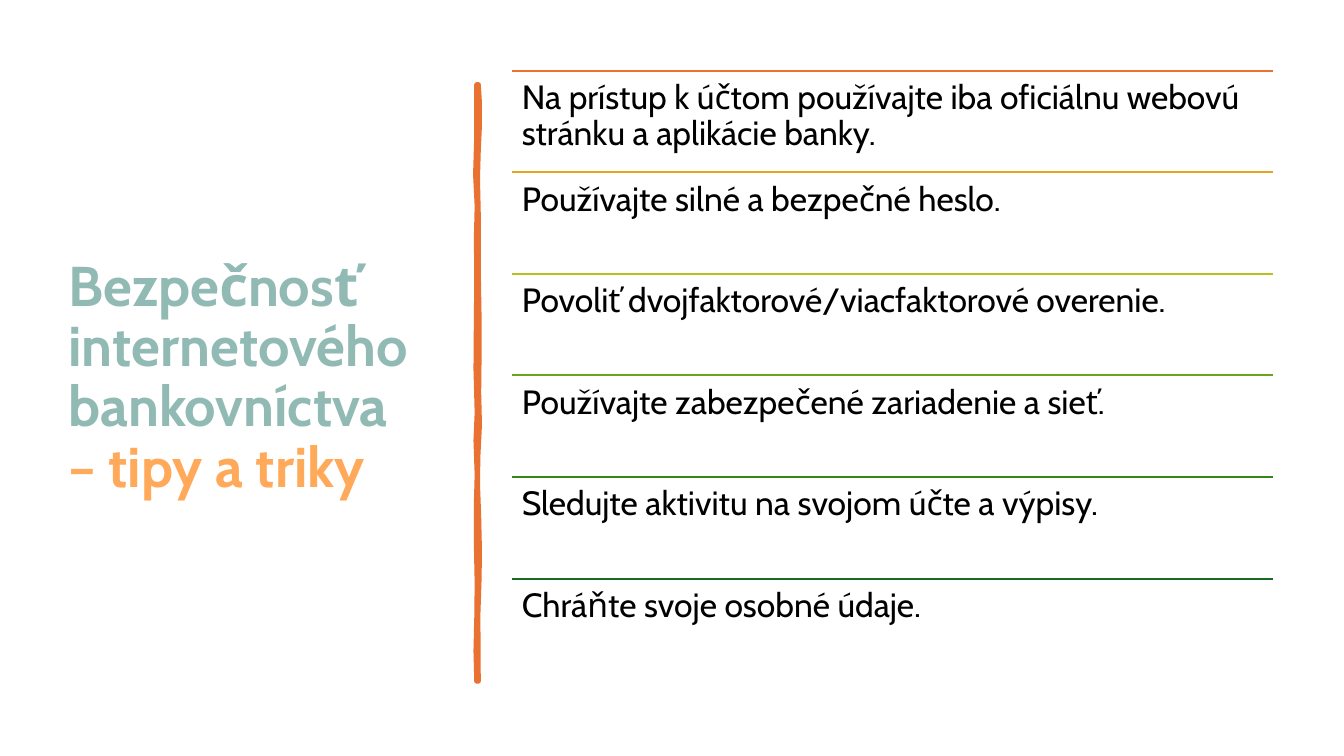
from dataclasses import dataclass

from lxml import etree
from pptx import Presentation
from pptx.dml.color import RGBColor
from pptx.enum import shapes, text
from pptx.oxml import ns
from pptx.slide import Slide
from pptx.util import Cm, Pt

FONT = "Cabin"
BLACK = RGBColor(0x00, 0x00, 0x00)
TEAL = RGBColor(0x92, 0xBA, 0xB5)
APRICOT = RGBColor(0xFF, 0xAA, 0x5A)
ORANGE = RGBColor(0xE9, 0x71, 0x32)
AMBER = RGBColor(0xE0, 0xA6, 0x1D)
LIME = RGBColor(0xB7, 0xC1, 0x1E)
GRASS = RGBColor(0x6B, 0xA3, 0x1D)
GREEN = RGBColor(0x34, 0x86, 0x1C)
FOREST = RGBColor(0x19, 0x6B, 0x24)

CONTENT_TOP = 1.78
TIPS_LEFT, TIPS_WIDTH, TIP_HEIGHT = 12.9, 19.18, 2.56

# Edges of the hand-drawn divider, in hundredths of a centimetre
DIVIDER_RIGHT = [
    (1206, 213), (1209, 260), (1209, 315), (1206, 380), (1204, 450),
    (1206, 540), (1206, 680), (1208, 800), (1208, 900), (1207, 990),
    (1209, 1070), (1205, 1150), (1204, 1220), (1207, 1300), (1209, 1390),
    (1208, 1460), (1205, 1550), (1206, 1717),
]
DIVIDER_LEFT = [
    (1201, 1717), (1199, 1640), (1201, 1557), (1202, 1470), (1200, 1370),
    (1200, 1270), (1202, 1196), (1199, 1110), (1202, 1040), (1199, 930),
    (1200, 800), (1201, 700), (1200, 600), (1202, 520), (1198, 440),
    (1201, 340), (1201, 213),
]


@dataclass(frozen=True)
class Tip:
    wording: str
    rule_color: RGBColor


TIPS = [
    Tip("Na prístup k účtom používajte iba oficiálnu webovú stránku "
        "a aplikácie banky.", ORANGE),
    Tip("Používajte silné a bezpečné heslo.", AMBER),
    Tip("Povoliť dvojfaktorové/viacfaktorové overenie.", LIME),
    Tip("Používajte zabezpečené zariadenie a sieť.", GRASS),
    Tip("Sledujte aktivitu na svojom účte a výpisy.", GREEN),
    Tip("Chráňte svoje osobné údaje.", FOREST),
]


def add_title(slide: Slide) -> None:
    title = slide.shapes.title
    title.left, title.top = Cm(1.47), Cm(CONTENT_TOP)
    title.width, title.height = Cm(9.8), Cm(15.52)
    frame = title.text_frame
    frame.auto_size = text.MSO_AUTO_SIZE.NONE
    frame.vertical_anchor = text.MSO_ANCHOR.MIDDLE
    paragraph = frame.paragraphs[0]
    paragraph.alignment = text.PP_ALIGN.LEFT
    paragraph.line_spacing = 0.9
    font = paragraph.font
    font.name, font.size, font.bold = FONT, Pt(40), True
    subject = paragraph.add_run()
    subject.text = "Bezpečnosť internetového bankovníctva"
    subject.font.color.rgb = TEAL
    paragraph.add_line_break()
    tagline = paragraph.add_run()
    tagline.text = "– tipy a triky"
    tagline.font.color.rgb = APRICOT


def add_divider(slide: Slide) -> None:
    outline = DIVIDER_RIGHT + DIVIDER_LEFT
    builder = slide.shapes.build_freeform(*outline[0], scale=Cm(0.01))
    builder.add_line_segments(outline[1:], close=True)
    divider = builder.convert_to_shape()
    divider.shadow.inherit = False
    divider.fill.solid()
    divider.fill.fore_color.rgb = ORANGE
    divider.line.color.rgb = ORANGE
    divider.line.width = Pt(3.25)
    etree.SubElement(divider.line._get_or_add_ln(), ns.qn("a:round"))


def add_tip(slide: Slide, tip: Tip, top: float) -> None:
    """Draw a coloured rule with the tip's wording under it."""
    rule = slide.shapes.add_connector(
        shapes.MSO_CONNECTOR.STRAIGHT,
        Cm(TIPS_LEFT), Cm(top), Cm(TIPS_LEFT + TIPS_WIDTH), Cm(top))
    rule.line.color.rgb = tip.rule_color
    rule.line.width = Pt(1.5)
    etree.SubElement(rule._element.spPr, ns.qn("a:effectLst"))

    box = slide.shapes.add_textbox(
        Cm(TIPS_LEFT), Cm(top), Cm(TIPS_WIDTH), Cm(TIP_HEIGHT))
    frame = box.text_frame
    frame.word_wrap = True
    frame.margin_left = frame.margin_right = Cm(0.25)
    frame.margin_top = frame.margin_bottom = Cm(0.25)
    paragraph = frame.paragraphs[0]
    paragraph.text = tip.wording
    paragraph.line_spacing = 0.9
    font = paragraph.font
    font.name, font.size = FONT, Pt(24)
    font.color.rgb = BLACK


def main() -> None:
    presentation = Presentation()
    presentation.slide_width = Cm(33.87)
    presentation.slide_height = Cm(19.05)
    title_only = presentation.slide_layouts.get_by_name("Title Only")
    slide = presentation.slides.add_slide(title_only)
    add_title(slide)
    add_divider(slide)
    for row, tip in enumerate(TIPS):
        add_tip(slide, tip, CONTENT_TOP + row * TIP_HEIGHT)
    presentation.save("out.pptx")


if __name__ == "__main__":
    main()
